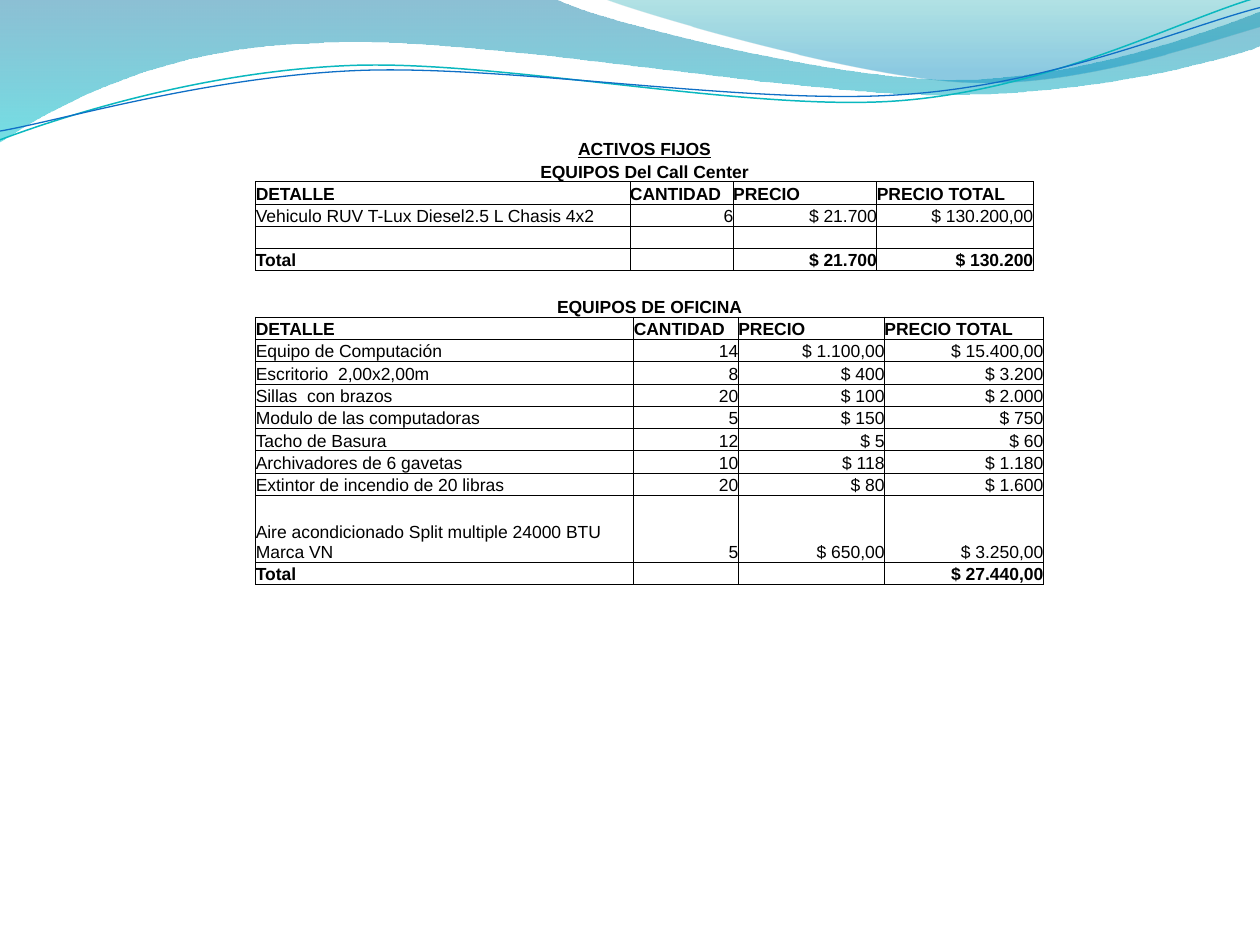
import math
from lxml import etree
from pptx import Presentation
from pptx import util as u
from pptx.dml.color import RGBColor
from pptx.enum import text
from pptx.oxml import ns

HUES = {"ink": "000000", "sea": "0074A1", "aqua": "00C6CF", "teal": "00A1A9",
        "sky": "008BBF", "mint": "0AB8BF", "blue": "0F6FC6"}
FONT = "Arial"
TILT = 2.7


def hue(name):
    return RGBColor.from_string(HUES[name])


def sub(node, tag, **attrs):
    return etree.SubElement(node, ns.qn(tag), attrs)


def bend(shape, knots):
    lines = iter(list(shape._element.spPr.iter(ns.qn("a:lnTo"))))
    for knot in knots:
        first = next(lines)
        if len(knot) == 6:
            first.tag = ns.qn("a:cubicBezTo")
            for extra in (next(lines), next(lines)):
                first.append(extra[0])
                extra.getparent().remove(extra)


def trace(slide, box, start, knots, close, tilt=0):
    left, top, width, height = box
    mid_x, mid_y = left + width / 2, top + height / 2
    cos, sin = math.cos(math.radians(tilt)), math.sin(math.radians(tilt))
    spots = [start] + [knot[i:i + 2] for knot in knots for i in range(0, len(knot), 2)]
    spots = [(u.Inches(mid_x + (x - mid_x) * cos - (y - mid_y) * sin),
              u.Inches(mid_y + (x - mid_x) * sin + (y - mid_y) * cos))
             for x, y in spots]
    pen = slide.shapes.build_freeform(*spots[0])
    pen.add_line_segments(spots[1:], close=close)
    shape = pen.convert_to_shape()
    bend(shape, knots)
    shape.rotation = -tilt
    shape.shadow.inherit = False
    return shape


def add_wave(slide, box, start, knots, stops):
    shape = trace(slide, box, start, knots, True)
    shape.line.fill.background()
    shape.fill.gradient()
    shape.fill.gradient_angle = 270
    for stop, (place, name, alpha) in zip(shape.fill.gradient_stops, stops):
        stop.position = place
        stop.color.rgb = hue(name)
    tints = shape._element.spPr.iter(ns.qn("a:srgbClr"))
    for tint, (place, name, alpha) in zip(list(tints), stops):
        sub(tint, "a:alpha", val=str(alpha * 1000))


def add_swirl(slide, box, start, knots, name, width):
    shape = trace(slide, box, start, knots, False, TILT)
    shape.fill.background()
    shape.line.color.rgb = hue(name)
    shape.line.width = u.Pt(width)


def add_header(slide):
    add_wave(slide, (-0.01, -0.01, 10.02, 1.14), (0, 0), [
        (4.4, -0.01), (4.76, 0.17, 6.64, 0.63, 7.58, 0.63),
        (8.53, 0.63, 9.58, 0.26, 10, 0.09), (10.01, 0.36),
        (9.83, 0.44, 8.7, 0.76, 7.46, 0.75), (6.22, 0.75, 3.82, 0.28, 2.57, 0.34),
        (1.29, 0.36, 0.46, 0.83, -0.01, 1.13), (0, 0)],
        [(0, "sea", 45), (1, "aqua", 55)])
    add_wave(slide, (4.79, -0.01, 5.21, 0.7), (4.79, -0.01), [
        (5.09, 0.11, 6.82, 0.62, 7.69, 0.65), (8.56, 0.69, 9.61, 0.32, 10, 0.21),
        (10, 0), (4.79, -0.01)],
        [(0, "teal", 30), (0.8, "sky", 45)])
    add_swirl(slide, (-0.02, 0.22, 10.02, 0.71), (0, 1.11), [
        (0.48, 0.93, 1.58, 0.57, 2.77, 0.52), (3.95, 0.47, 5.93, 0.89, 7.13, 0.8),
        (8.33, 0.71, 9.38, 0.15, 9.98, -0.02)], "mint", 0.85)
    add_swirl(slide, (-0.02, 0.3, 10.03, 0.58), (0, 1.04), [
        (0.47, 0.96, 1.64, 0.61, 2.83, 0.56), (4.03, 0.51, 5.97, 0.84, 7.17, 0.75),
        (8.36, 0.67, 9.41, 0.21, 10, 0.06)], "blue", 0.75)


def set_edges(cell, sides):
    props = cell._tc.get_or_add_tcPr()
    for side in "LRTB":
        line = sub(props, "a:ln" + side, w=str(u.Pt(0.5)))
        if side in sides:
            sub(sub(line, "a:solidFill"), "a:srgbClr", val=HUES["ink"])
        else:
            sub(line, "a:noFill")
    cell.fill.background()


def fill_cell(cell, words, align, bold, under):
    cell.margin_left = cell.margin_right = cell.margin_top = cell.margin_bottom = 0
    cell.vertical_anchor = text.MSO_ANCHOR.BOTTOM
    para = cell.text_frame.paragraphs[0]
    para.alignment = align
    if not words:
        sub(para._p, "a:endParaRPr", sz="1000")
        return
    for index, part in enumerate(words.split("\n")):
        if index:
            para.add_line_break()
        run = para.add_run()
        run.text = part
        run.font.name = FONT
        run.font.size = u.Pt(10)
        run.font.bold = bold
        run.font.underline = under
        run.font.color.rgb = hue("ink")


def add_costs(slide, box, cols, titles, rows, tall):
    left, top, width, height = map(u.Inches, box)
    heads = len(titles)
    head = ("DETALLE", "CANTIDAD", "PRECIO", "PRECIO TOTAL")
    grid = [(title, "", "", "") for title in titles] + [head] + rows
    frame = slide.shapes.add_table(len(grid), len(cols), left, top, width, height)
    table = frame.table
    table.first_row = table.horz_banding = False
    for col, size in zip(table.columns, cols):
        col.width = u.Inches(size)
    step = (box[3] - sum(tall.values())) / (len(grid) - len(tall))
    aligns = text.PP_ALIGN
    for r, line in enumerate(grid):
        table.rows[r].height = u.Inches(tall.get(r, step))
        bold = r <= heads or r == len(grid) - 1
        for c, words in enumerate(line):
            cell = table.cell(r, c)
            align = aligns.RIGHT if c and r > heads else aligns.LEFT
            sides = "LRTB"
            if r < heads:
                align = aligns.CENTER
                sides = "B" if r == heads - 1 else ""
            set_edges(cell, sides)
            fill_cell(cell, words, align, bold, words == "ACTIVOS FIJOS")
        if r < heads:
            table.cell(r, 0).merge(table.cell(r, len(cols) - 1))


def main():
    deck = Presentation()
    deck.slide_width, deck.slide_height = u.Inches(10), u.Inches(7.5)
    slide = deck.slides.add_slide(deck.slide_layouts[6])
    add_header(slide)
    add_costs(slide, (2.03, 1.09, 6.17, 1.06), (2.97, 0.82, 1.14, 1.24),
              ["ACTIVOS FIJOS", "EQUIPOS Del Call Center"], [
        ("Vehiculo RUV T-Lux Diesel2.5 L Chasis 4x2", "6", "$ 21.700", "$ 130.200,00"),
        ("", "", "", ""),
        ("Total", "", "$ 21.700", "$ 130.200")], {})
    add_costs(slide, (2.03, 2.34, 6.25, 2.3), (3, 0.83, 1.16, 1.26),
              ["EQUIPOS DE OFICINA"], [
        ("Equipo de Computación", "14", "$ 1.100,00", "$ 15.400,00"),
        ("Escritorio  2,00x2,00m", "8", "$ 400", "$ 3.200"),
        ("Sillas  con brazos", "20", "$ 100", "$ 2.000"),
        ("Modulo de las computadoras", "5", "$ 150", "$ 750"),
        ("Tacho de Basura", "12", "$ 5", "$ 60"),
        ("Archivadores de 6 gavetas", "10", "$ 118", "$ 1.180"),
        ("Extintor de incendio de 20 libras", "20", "$ 80", "$ 1.600"),
        ("Aire acondicionado Split multiple 24000 BTU\nMarca VN",
         "5", "$ 650,00", "$ 3.250,00"),
        ("Total", "", "", "$ 27.440,00")], {9: 0.53})
    deck.save("out.pptx")


if __name__ == "__main__":
    main()
